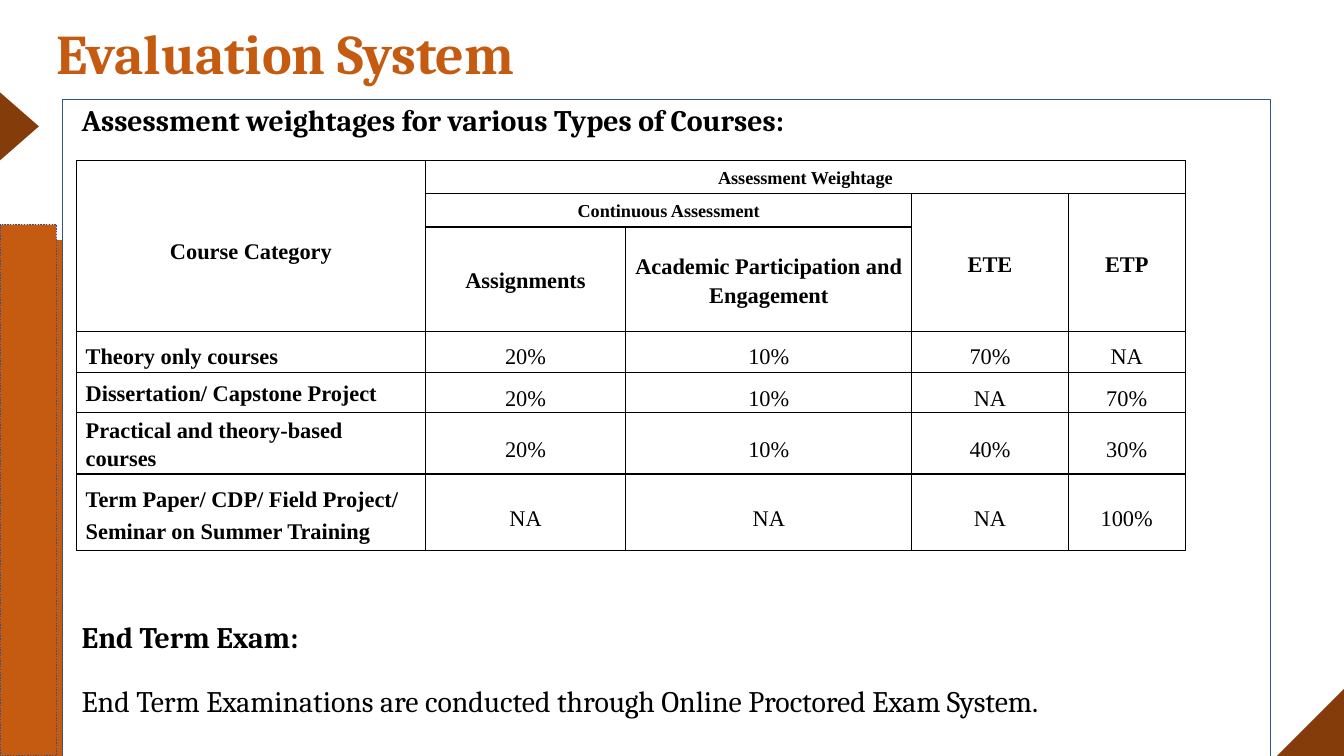
import pptx
import pptx.dml.color
import pptx.enum.dml
import pptx.enum.shapes
import pptx.enum.text
import pptx.oxml
import pptx.util

Cm, Pt = pptx.util.Cm, pptx.util.Pt
SHAPE = pptx.enum.shapes.MSO_SHAPE
ALIGN = pptx.enum.text.PP_ALIGN
MIDDLE = pptx.enum.text.MSO_ANCHOR.MIDDLE
TOP = pptx.enum.text.MSO_ANCHOR.TOP
DOTTED = pptx.enum.dml.MSO_LINE.ROUND_DOT
ORANGE, BROWN, BLUE, WHITE, BLACK = "C55A11", "843C0B", "325491", "FFFFFF", "000000"


def rgb(value):
    return pptx.dml.color.RGBColor.from_string(value)


def write(para, text, para_format, font_format, color=BLACK):
    """Put one run into a paragraph and apply both format dicts."""
    span = para.add_run()
    span.text = text
    span.font.color.rgb = rgb(color)
    for target, values in ((para, para_format), (span.font, font_format)):
        for name, value in values.items():
            setattr(target, name, value)


deck = pptx.Presentation()
deck.slide_width, deck.slide_height = Cm(33.87), Cm(19.05)
page = deck.slides.add_slide(deck.slide_layouts[6])

# Corner, arrow, orange band and white frame: kind, place, rotation, fill, line, dash
decorations = [
    (SHAPE.RIGHT_TRIANGLE, (32.18, 17.32, 1.73, 1.73), 270, BROWN, None, None),
    (SHAPE.ISOSCELES_TRIANGLE, (-0.38, 2.69, 1.73, 0.99), 90, BROWN, None, None),
    (SHAPE.RECTANGLE, (0.84, 6.05, 27.66, 13.03), 0, ORANGE, None, None),
    (SHAPE.RECTANGLE, (1.57, 2.51, 30.45, 16.56), 0, WHITE, BLUE, None),
    (SHAPE.RECTANGLE, (0, 5.66, 1.42, 13.39), 0, ORANGE, BLUE, DOTTED),
]
for kind, place, rotation, fill, line, dash in decorations:
    shape = page.shapes.add_shape(kind, *map(Cm, place))
    shape.shadow.inherit = False
    shape.rotation = rotation
    shape.fill.solid()
    shape.fill.fore_color.rgb = rgb(fill)
    if line:
        shape.line.color.rgb = rgb(line)
        shape.line.width = Pt(1)
        shape.line.dash_style = dash
    else:
        shape.line.fill.background()

# Title and body text
title_para = {"line_spacing": 0.8}
body_para = {"alignment": ALIGN.JUSTIFY, "line_spacing": 1.07,
             "space_before": Pt(8), "space_after": Pt(10.7)}
title_font = {"name": "Cambria", "size": Pt(40), "bold": True}
strong_font = {"name": "Cambria", "size": Pt(21.3), "bold": True}
plain_font = {**strong_font, "bold": False}
text_boxes = [
    ((1.42, 0.79, 25.4, 1.63), 0, title_para, ORANGE,
     [("Evaluation System", title_font)]),
    ((1.63, 2.51, 29.97, 1.2), 0.43, body_para, BLACK,
     [("Assessment weightages for various Types of Courses:", strong_font)]),
    ((1.63, 15.52, 29.97, 3), 0.43, body_para, BLACK,
     [("End Term Exam:", strong_font),
      ("End Term Examinations are conducted through Online Proctored Exam System.",
       plain_font)]),
]
for place, indent, para_format, color, lines in text_boxes:
    frame = page.shapes.add_textbox(*map(Cm, place)).text_frame
    frame.word_wrap = True
    frame.margin_left = Cm(indent)
    frame.margin_right = frame.margin_top = frame.margin_bottom = 0
    for index, (text, font_format) in enumerate(lines):
        para = frame.add_paragraph() if index else frame.paragraphs[0]
        write(para, text, para_format, font_format, color)

# Assessment table
column_widths = [8.79, 5.05, 7.21, 3.94, 2.95]
row_heights = [0.84, 0.84, 2.64, 1.02, 1.02, 1.47, 1.93]
table = page.shapes.add_table(len(row_heights), len(column_widths), Cm(1.93), Cm(4.04),
                              Cm(sum(column_widths)), Cm(sum(row_heights))).table
table.first_row = table.horz_banding = False
for column, width in zip(table.columns, column_widths):
    column.width = Cm(width)
for row, height in zip(table.rows, row_heights):
    row.height = Cm(height)

cell_format = {"margin_left": Cm(0.23), "margin_right": Cm(0.23), "margin_top": 0,
               "margin_bottom": 0, "vertical_anchor": MIDDLE}
for cell in table.iter_cells():
    for name, value in cell_format.items():
        setattr(cell, name, value)
    for side in "LRTB":
        cell._tc.get_or_add_tcPr().append(pptx.oxml.parse_xml(
            f'<a:ln{side} xmlns:a="http://schemas.openxmlformats.org/drawingml/2006/main" '
            f'w="12700"><a:solidFill><a:srgbClr val="{BLACK}"/></a:solidFill></a:ln{side}>'))
    cell.fill.solid()
    cell.fill.fore_color.rgb = rgb(WHITE)

# Header cells: text, first cell, last cell, font size, line spacing
headers = [
    ("Course Category", (0, 0), (2, 0), 16, 1.5),
    ("Assessment Weightage", (0, 1), (0, 4), 13, 1.15),
    ("Continuous Assessment", (1, 1), (1, 2), 13, 1.15),
    ("ETE", (1, 3), (2, 3), 16, 1.15),
    ("ETP", (1, 4), (2, 4), 16, 1.15),
    ("Assignments", (2, 1), (2, 1), 16, 1.15),
    ("Academic Participation and Engagement", (2, 2), (2, 2), 16, 1.15),
]
cell_font = {"name": "Times New Roman", "size": Pt(16), "bold": True}
for text, first, last, size, spacing in headers:
    cell = table.cell(*first)
    if first != last:
        cell.merge(table.cell(*last))
    write(cell.text_frame.paragraphs[0], text,
          {"alignment": ALIGN.CENTER, "line_spacing": spacing, "space_before": Pt(0.4)},
          {**cell_font, "size": Pt(size)})

# Course rows: category, its line spacing, anchor, weightages
courses = [
    ("Theory only courses", 1.5, TOP, ["20%", "10%", "70%", "NA"]),
    ("Dissertation/ Capstone Project", 1.15, MIDDLE, ["20%", "10%", "NA", "70%"]),
    ("Practical and theory-based courses", 1.14, MIDDLE, ["20%", "10%", "40%", "30%"]),
    ("Term Paper/ CDP/ Field Project/ Seminar on Summer Training", 1.3, MIDDLE,
     ["NA", "NA", "NA", "100%"]),
]
for row_index, (category, spacing, anchor, weightages) in enumerate(courses, start=3):
    for column_index, text in enumerate([category, *weightages]):
        cell = table.cell(row_index, column_index)
        cell.vertical_anchor = anchor
        is_category = column_index == 0
        write(cell.text_frame.paragraphs[0], text,
              {"alignment": ALIGN.LEFT if is_category else ALIGN.CENTER,
               "line_spacing": spacing if is_category else 1.5},
              {**cell_font, "bold": is_category})

deck.save("out.pptx")
